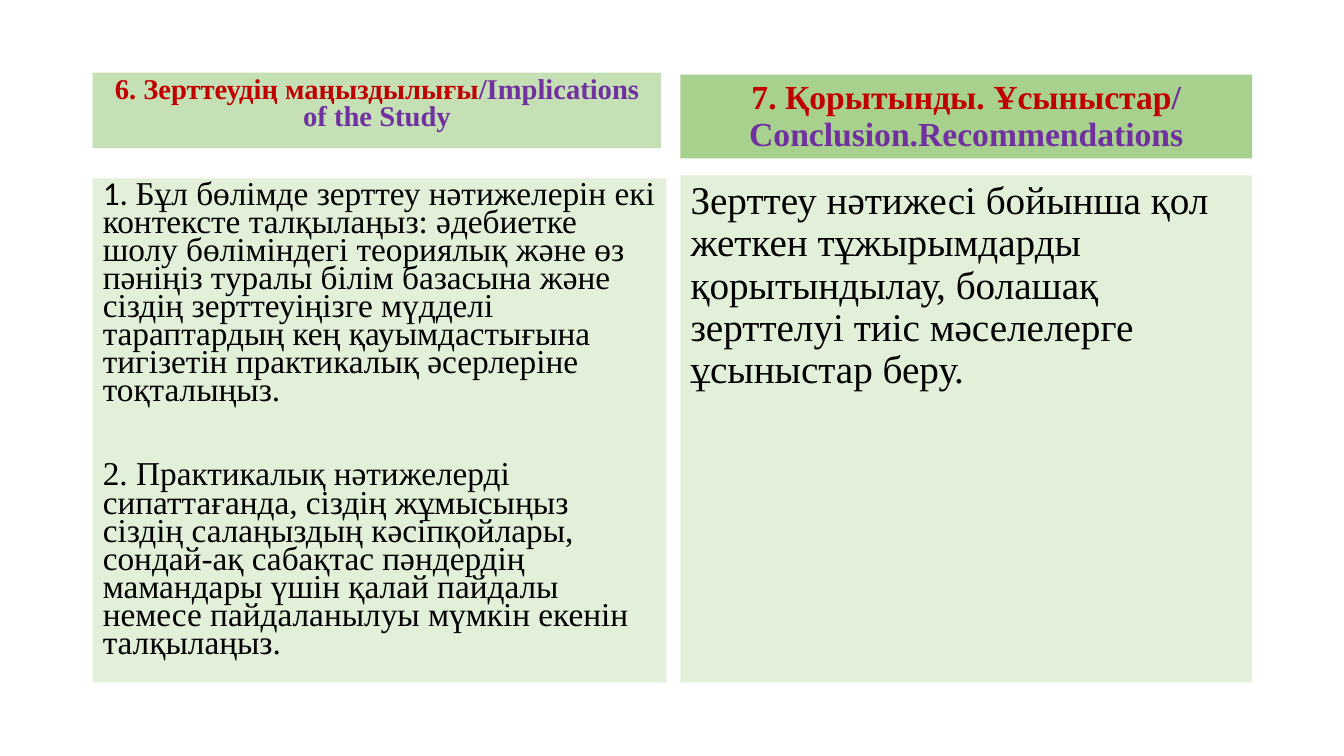
"""Build a two-column slide on a study's implications and its conclusions."""
from dataclasses import dataclass

from lxml import etree
from pptx import Presentation
from pptx import util as u
from pptx.dml.color import RGBColor
from pptx.enum import text
from pptx.oxml import ns

SERIF = "Times New Roman"
RED, PURPLE, BLACK = "C00000", "7030A0", "000000"
LEFT_COLUMN, RIGHT_COLUMN = 6.9, 50.63
COMPARISON_LAYOUT = 4


@dataclass(frozen=True)
class Words:
    """A stretch of text in one colour and typeface."""
    wording: str
    colour: str = BLACK
    face: str = SERIF


@dataclass(frozen=True)
class Panel:
    """A filled placeholder; its box is in percent of the slide's size."""
    idx: int
    box: tuple[float, float, float, float]
    fill: str
    size: float
    spacing: float
    paragraphs: tuple[tuple[Words, ...], ...]
    heading: bool = False
    anchor: text.MSO_ANCHOR = text.MSO_ANCHOR.TOP
    gap: float = 10


PANELS = (
    Panel(1, (LEFT_COLUMN, 9.6, 42.3, 10), "C5E0B4", 20.4, 0.8, ((
        Words("6. Зерттеудің маңыздылығы", RED),
        Words("/Implications of the Study", PURPLE)),), heading=True),
    Panel(2, (LEFT_COLUMN, 23.6, 42.68, 66.67), "E2F0D9", 23.8, 0.7, (
        (Words("1. ", face="Calibri"),
         Words("Бұл бөлімде зерттеу нәтижелерін екі контексте талқылаңыз: "
               "әдебиетке шолу бөліміндегі теориялық және өз пәніңіз туралы "
               "білім базасына және сіздің зерттеуіңізге мүдделі тараптардың "
               "кең қауымдастығына тигізетін практикалық әсерлеріне "
               "тоқталыңыз.")),
        (Words("2. Практикалық нәтижелерді сипаттағанда, сіздің жұмысыңыз "
               "сіздің салаңыздың кәсіпқойлары, сондай-ақ сабақтас пәндердің "
               "мамандары үшін қалай пайдалы немесе пайдаланылуы мүмкін "
               "екенін талқылаңыз."),)), gap=40),
    Panel(3, (RIGHT_COLUMN, 9.87, 42.53, 11.07), "A9D18E", 24, 0.9, ((
        Words("7. Қорытынды. Ұсыныстар", RED),
        Words("/ Conclusion.Recommendations", PURPLE)),), heading=True,
        anchor=text.MSO_ANCHOR.BOTTOM),
    Panel(4, (RIGHT_COLUMN, 23.2, 42.53, 67.07), "E2F0D9", 28, 0.9, ((
        Words("Зерттеу нәтижесі бойынша қол жеткен тұжырымдарды "
              "қорытындылау, болашақ зерттелуі тиіс мәселелерге ұсыныстар "
              "беру."),),)),
)


def paint(target, colour: str) -> None:
    """Give a fill a solid colour from a hex string."""
    target.solid()
    target.fore_color.rgb = RGBColor.from_string(colour)


def assign(target, values: dict) -> None:
    """Set each named attribute on the target."""
    for name, value in values.items():
        setattr(target, name, value)


def drop_bullet(paragraph) -> None:
    """Remove a paragraph's bullet and hanging indent."""
    properties = paragraph._p.get_or_add_pPr()
    properties.set("marL", "0")
    properties.set("indent", "0")
    etree.SubElement(properties, ns.qn("a:buNone"))


def write_panel(panel: Panel, slide, width: int, height: int) -> None:
    """Place, fill and write one panel."""
    holder = slide.placeholders[panel.idx]
    left, top, across, down = panel.box
    assign(holder, {"left": round(width * left / 100),
                    "top": round(height * top / 100),
                    "width": round(width * across / 100),
                    "height": round(height * down / 100)})
    paint(holder.fill, panel.fill)
    frame = holder.text_frame
    assign(frame, {"word_wrap": True, "vertical_anchor": panel.anchor,
                   "auto_size": text.MSO_AUTO_SIZE.NONE})
    align = text.PP_ALIGN.CENTER if panel.heading else text.PP_ALIGN.LEFT
    for order, passage in enumerate(panel.paragraphs):
        paragraph = frame.add_paragraph() if order else frame.paragraphs[0]
        assign(paragraph, {"alignment": align, "line_spacing": panel.spacing,
                           "space_before": u.Pt(panel.gap if order else 10)})
        drop_bullet(paragraph)
        for words in passage:
            run = paragraph.add_run()
            run.text = words.wording
            assign(run.font, {"name": words.face, "size": u.Pt(panel.size),
                              "bold": panel.heading})
            paint(run.font.fill, words.colour)


def main() -> None:
    """Build and save the slide."""
    deck = Presentation()
    assign(deck, {"slide_width": u.Inches(13.33),
                  "slide_height": u.Inches(7.5)})
    slide = deck.slides.add_slide(deck.slide_layouts[COMPARISON_LAYOUT])
    unused_title = slide.shapes.title.element
    unused_title.getparent().remove(unused_title)
    for panel in PANELS:
        write_panel(panel, slide, deck.slide_width, deck.slide_height)
    deck.save("out.pptx")


if __name__ == "__main__":
    main()
